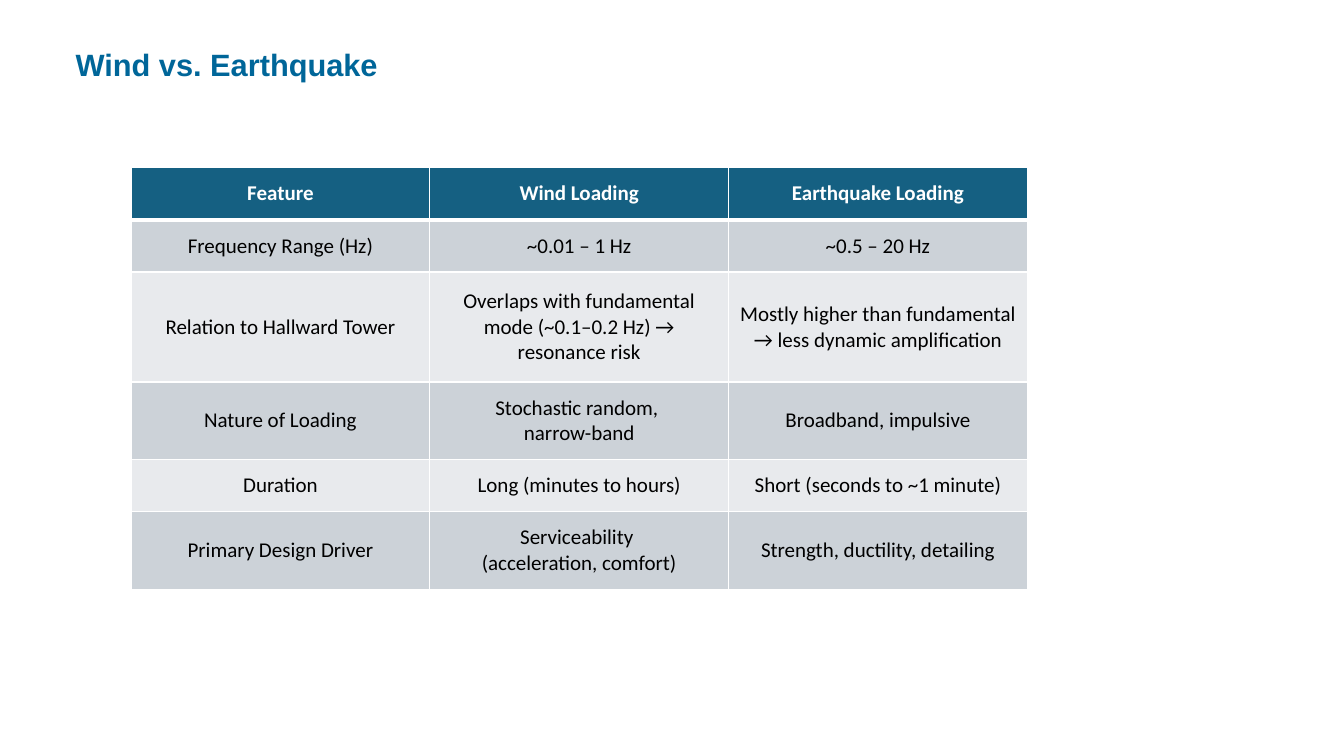
from dataclasses import dataclass

from lxml import etree
from pptx import Presentation
from pptx.dml.color import RGBColor
from pptx.enum.text import MSO_ANCHOR, MSO_AUTO_SIZE, PP_ALIGN
from pptx.oxml.ns import qn
from pptx.util import Inches, Pt

CENTER, LEFT = PP_ALIGN.CENTER, PP_ALIGN.LEFT
MIDDLE = MSO_ANCHOR.MIDDLE
FIT_SHAPE = MSO_AUTO_SIZE.SHAPE_TO_FIT_TEXT
TITLE_ONLY = 5


@dataclass(frozen=True)
class Theme:
    title: str = "006699"
    header: str = "156082"
    bands: tuple = ("CCD2D8", "E8EAED")
    white: str = "FFFFFF"
    black: str = "000000"
    title_font: str = "Arial"
    table_font: str = "Calibri"
    title_size: int = 22
    table_size: int = 15
    rule: int = 1
    header_rule: int = 3


THEME = Theme()


def style_font(font, name, size, color, bold):
    font.name = name
    font.size = Pt(size)
    font.bold = bold
    font.color.rgb = RGBColor.from_string(color)


def add_border(cell, side, width):
    """Draw one white cell edge; side is L, R, T or B, added in that order."""
    line = etree.SubElement(cell._tc.get_or_add_tcPr(), qn(f"a:ln{side}"), w=str(Pt(width)))
    fill = etree.SubElement(line, qn("a:solidFill"))
    etree.SubElement(fill, qn("a:srgbClr"), val=THEME.white)


prs = Presentation()
prs.slide_width, prs.slide_height = Inches(13.33), Inches(7.5)
slide = prs.slides.add_slide(prs.slide_layouts[TITLE_ONLY])

heading = slide.shapes.title
heading.left, heading.top = Inches(0.65), Inches(0.4)
heading.width, heading.height = Inches(3.24), Inches(0.47)
heading.text_frame.word_wrap = False
heading.text_frame.auto_size = FIT_SHAPE
heading_line = heading.text_frame.paragraphs[0]
heading_line.alignment = LEFT
heading_run = heading_line.add_run()
heading_run.text = "Wind vs. Earthquake"
style_font(heading_run.font, THEME.title_font, THEME.title_size, THEME.title, True)

comparison = [
    ("Feature", "Wind Loading", "Earthquake Loading"),
    ("Frequency Range (Hz)", "~0.01 – 1 Hz", "~0.5 – 20 Hz"),
    ("Relation to Hallward Tower",
     "Overlaps with fundamental mode (~0.1–0.2 Hz) → resonance risk",
     "Mostly higher than fundamental → less dynamic amplification"),
    ("Nature of Loading", "Stochastic random, \nnarrow-band", "Broadband, impulsive"),
    ("Duration", "Long (minutes to hours)", "Short (seconds to ~1 minute)"),
    ("Primary Design Driver", "Serviceability \n(acceleration, comfort)",
     "Strength, ductility, detailing"),
]
row_heights = [0.52, 0.52, 1.09, 0.77, 0.52, 0.77]

table = slide.shapes.add_table(
    len(comparison), len(comparison[0]),
    Inches(1.3), Inches(1.66), Inches(8.89), Inches(sum(row_heights))).table
for column in table.columns:
    column.width = Inches(2.963)

for r, (height, entries) in enumerate(zip(row_heights, comparison)):
    table.rows[r].height = Inches(height)
    is_header = r == 0
    background = THEME.header if is_header else THEME.bands[(r - 1) % 2]
    ink = THEME.white if is_header else THEME.black
    edges = {
        "L": THEME.rule,
        "R": THEME.rule,
        "T": THEME.header_rule if r == 1 else THEME.rule,
        "B": THEME.header_rule if is_header else THEME.rule,
    }
    for c, entry in enumerate(entries):
        cell = table.cell(r, c)
        cell.vertical_anchor = MIDDLE
        for side, width in edges.items():
            add_border(cell, side, width)
        cell.fill.solid()
        cell.fill.fore_color.rgb = RGBColor.from_string(background)
        paragraph = cell.text_frame.paragraphs[0]
        paragraph.alignment = CENTER
        for i, words in enumerate(entry.split("\n")):
            if i:
                paragraph.add_line_break()
            run = paragraph.add_run()
            run.text = words
            style_font(run.font, THEME.table_font, THEME.table_size, ink, is_header)

prs.save("out.pptx")
